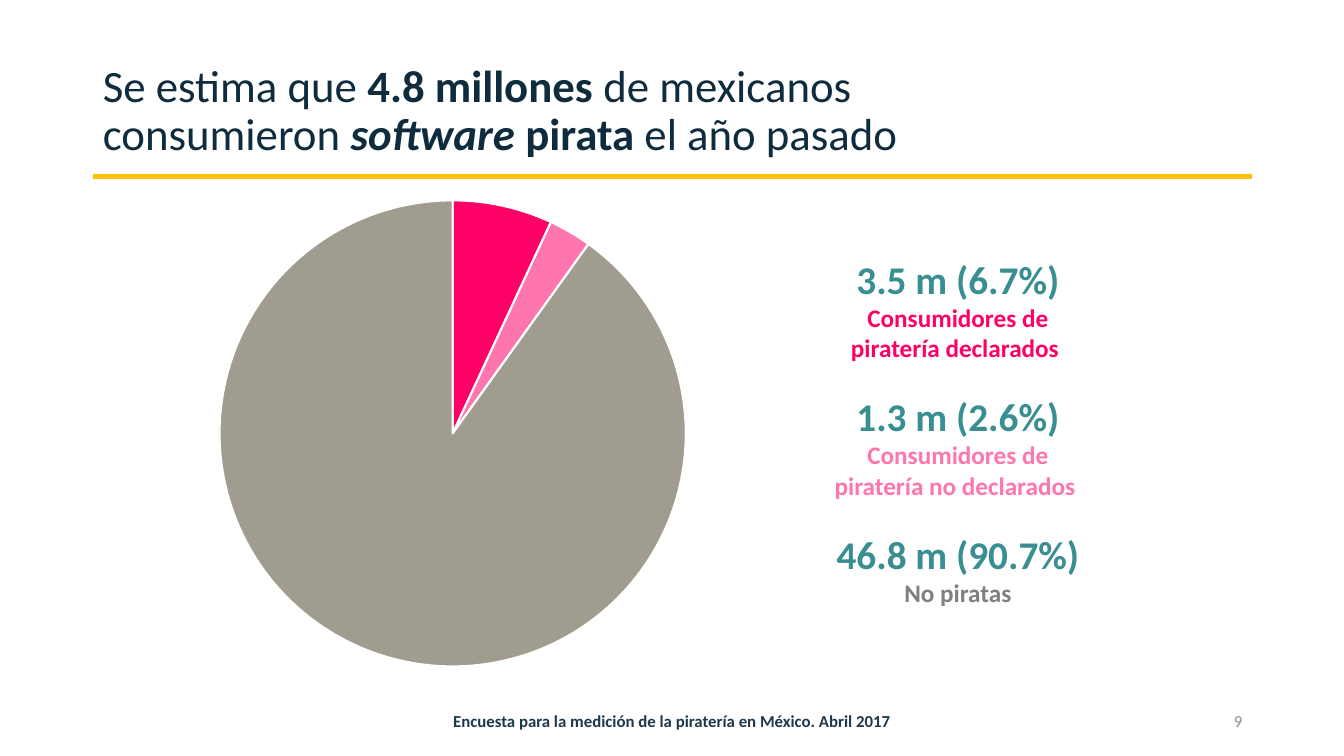
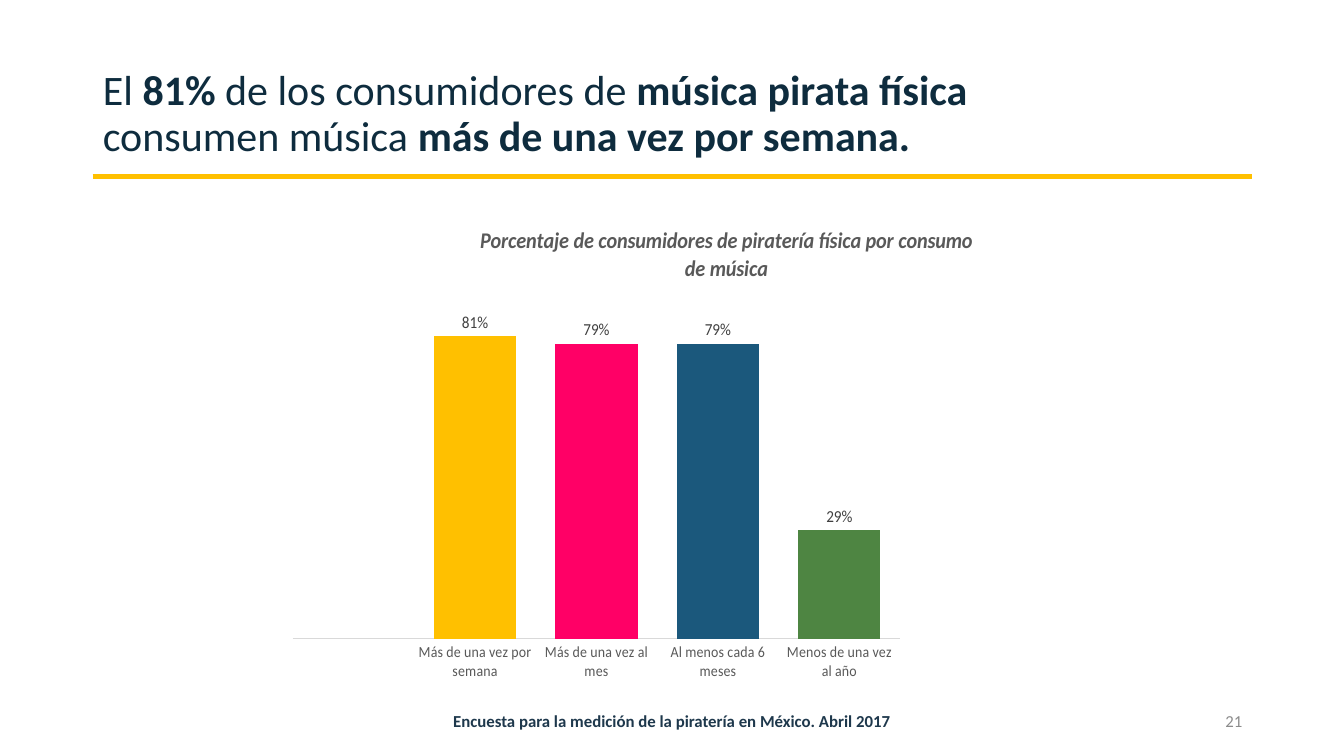
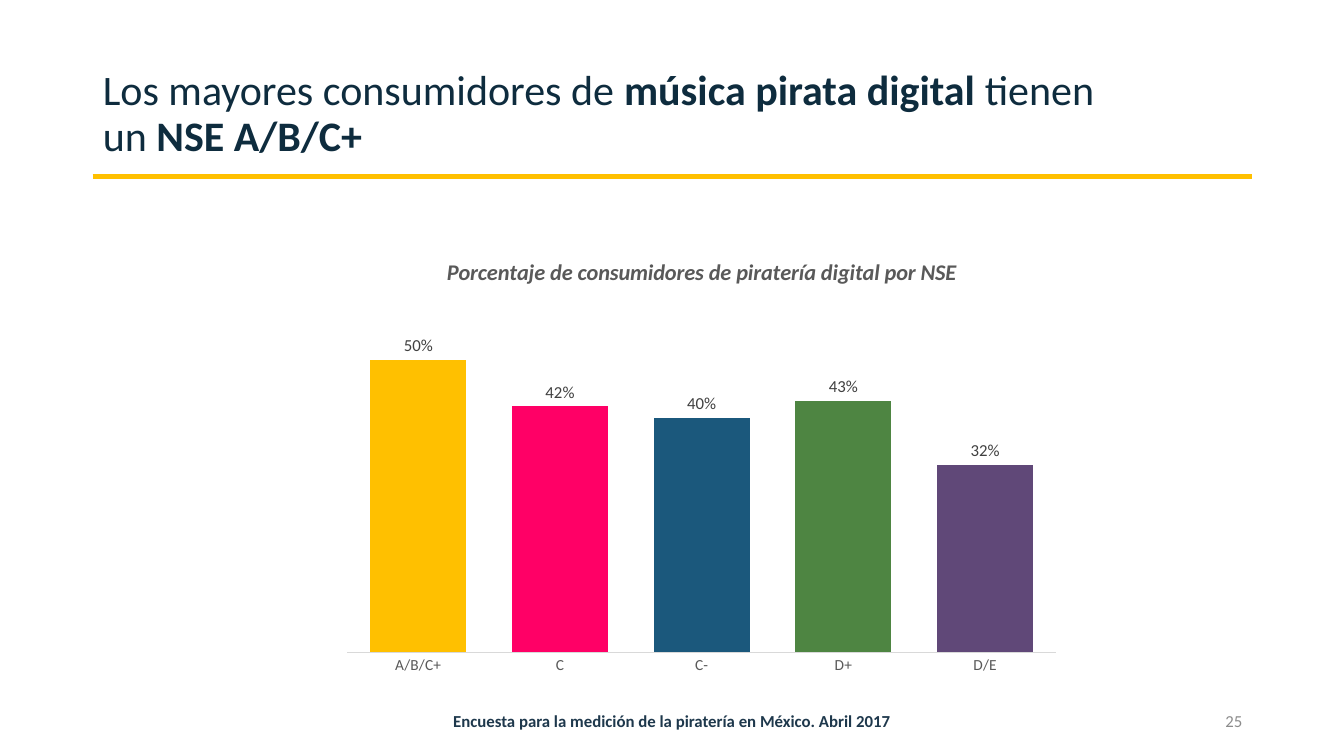
from dataclasses import dataclass

from lxml import etree
from pptx import Presentation
from pptx.chart.chart import Chart
from pptx.chart.data import CategoryChartData
from pptx.dml.color import RGBColor
from pptx.enum.chart import XL_CHART_TYPE, XL_LABEL_POSITION, XL_TICK_LABEL_POSITION, XL_TICK_MARK
from pptx.enum.shapes import MSO_CONNECTOR
from pptx.enum.text import MSO_ANCHOR, MSO_AUTO_SIZE, PP_ALIGN
from pptx.oxml import parse_xml
from pptx.oxml.ns import nsdecls, qn
from pptx.slide import Slide, SlideLayout
from pptx.util import Emu, Pt

PIE = XL_CHART_TYPE.PIE
COLUMN = XL_CHART_TYPE.COLUMN_CLUSTERED
OUTSIDE_END = XL_LABEL_POSITION.OUTSIDE_END
NEXT_TO_AXIS = XL_TICK_LABEL_POSITION.NEXT_TO_AXIS
NO_TICK = XL_TICK_MARK.NONE
STRAIGHT = MSO_CONNECTOR.STRAIGHT
TOP, MIDDLE, BOTTOM = MSO_ANCHOR.TOP, MSO_ANCHOR.MIDDLE, MSO_ANCHOR.BOTTOM
NO_AUTOFIT = MSO_AUTO_SIZE.NONE
LEFT, CENTER, RIGHT = PP_ALIGN.LEFT, PP_ALIGN.CENTER, PP_ALIGN.RIGHT

EMU_PER_PX = 9144
FONT = "Calibri"
FOOTER = "Encuesta para la medición de la piratería en México. Abril 2017"
COLORS = {
    "navy": "0E2C3E",
    "footer": "1E384C",
    "page_number": "8C8C8C",
    "gold": "FFC000",
    "pink": "FF0066",
    "light_pink": "FF75AD",
    "stone": "A19C90",
    "teal": "398E92",
    "gray": "7F7F7F",
    "blue": "1B587C",
    "green": "4E8542",
    "purple": "604878",
    "axis_text": "595959",
    "axis_line": "D9D9D9",
    "label": "404040",
    "white": "FFFFFF",
    "black": "000000",
}


@dataclass(frozen=True)
class Box:
    left: int
    top: int
    width: int
    height: int

    def emu(self) -> tuple[Emu, Emu, Emu, Emu]:
        return px(self.left), px(self.top), px(self.width), px(self.height)


@dataclass(frozen=True)
class Span:
    text: str
    bold: bool = False
    italic: bool = False


@dataclass(frozen=True)
class Line:
    text: str
    size: int
    color: str
    bold: bool = False
    space_before: float = 0


@dataclass(frozen=True)
class ColumnChart:
    box: Box
    title: str
    bars: list[tuple[str, float | None, str]]
    maximum: float
    plot_layout: dict[str, float]
    title_layout: dict[str, float] | None = None


TITLE_BOX = Box(92, 40, 1005, 124)
FOOTER_BOX = Box(399, 695, 535, 40)
NUMBER_BOX = Box(942, 695, 300, 40)
PIE_BOX = Box(161, 184, 576, 492)
PIE_LAYOUT = {"x": 0.09, "y": 0.03, "w": 0.82, "h": 0.94}
PIE_SLICES = [("1", 7, "pink"), ("2", 3, "light_pink"), ("3", 91, "stone")]
FIGURES_BOX = Box(809, 248, 282, 364)
FIGURES = [
    ("3.5 m (6.7%)", "Consumidores de piratería declarados ", "pink"),
    ("1.3 m (2.6%)", "Consumidores de piratería no declarados ", "light_pink"),
    ("46.8 m (90.7%)", "No piratas", "gray"),
]
FREQUENCY_CHART = ColumnChart(
    Box(278, 210, 693, 476),
    "Porcentaje de consumidores de piratería física por consumo de música",
    [
        (" ", None, "purple"),
        ("Más de una vez por semana", 0.81, "gold"),
        ("Más de una vez al mes", 0.79, "pink"),
        ("Al menos cada 6 meses", 0.79, "blue"),
        ("Menos de una vez al año", 0.29, "green"),
    ],
    0.9,
    {"x": 0.02, "y": 0.19, "w": 0.96, "h": 0.7},
    {"x": 0.31, "y": 0.02},
)
LEVEL_CHART = ColumnChart(
    Box(330, 237, 732, 441),
    "Porcentaje de consumidores de piratería digital por NSE",
    [
        ("A/B/C+", 0.5, "gold"),
        ("C", 0.42, "pink"),
        ("C-", 0.4, "blue"),
        ("D+", 0.43, "green"),
        ("D/E", 0.32, "purple"),
    ],
    0.6,
    {"x": 0.02, "y": 0.14, "w": 0.96, "h": 0.79},
)


def px(length: int) -> Emu:
    return Emu(length * EMU_PER_PX)


def rgb(name: str) -> RGBColor:
    return RGBColor.from_string(COLORS[name])


def set_font(font, size: int, color: str, bold: bool = False, italic: bool = False) -> None:
    font.name = FONT
    font.size = Pt(size)
    font.color.rgb = rgb(color)
    font.bold = bold
    font.italic = italic


def add_text(page: Slide, box: Box, lines: list[Line], align=LEFT, anchor=TOP) -> None:
    frame = page.shapes.add_textbox(*box.emu()).text_frame
    frame.word_wrap = True
    frame.vertical_anchor = anchor
    frame.text = "\n".join(line.text for line in lines)
    for para, line in zip(frame.paragraphs, lines):
        para.alignment = align
        if line.space_before:
            para.space_before = Pt(line.space_before)
        set_font(para.runs[0].font, line.size, line.color, line.bold)


def move_rule_to_layout(page: Slide, layout: SlideLayout) -> None:
    rule = page.shapes.add_connector(STRAIGHT, px(92), px(175), px(1242), px(175))
    rule.line.color.rgb = rgb("gold")
    rule.line.width = Pt(3)
    etree.SubElement(rule.element.spPr, qn("a:effectLst"))
    rule.element.nvCxnSpPr.cNvPr.set("id", "99")
    layout.shapes.element.append(rule.element)


def add_page(deck: Presentation, number: int, size: int, spans: list[Span]) -> Slide:
    page = deck.slides.add_slide(deck.slide_layouts[5])
    title = page.shapes.title
    title.left, title.top, title.width, title.height = TITLE_BOX.emu()
    frame = title.text_frame
    frame.auto_size = NO_AUTOFIT
    frame.word_wrap = True
    frame.vertical_anchor = BOTTOM
    para = frame.paragraphs[0]
    para.alignment = LEFT
    para.line_spacing = 0.9
    for span in spans:
        run = para.add_run()
        run.text = span.text
        set_font(run.font, size, "navy", span.bold, span.italic)
    add_text(page, NUMBER_BOX, [Line(str(number), 12, "page_number")], RIGHT, MIDDLE)
    add_text(page, FOOTER_BOX, [Line(FOOTER, 12, "footer", True)], CENTER, MIDDLE)
    return page


def set_layout(parent, position: int, values: dict[str, float], target: str = "") -> None:
    for previous in parent.findall(qn("c:layout")):
        parent.remove(previous)
    modes = "".join(f'<c:{key}Mode val="edge"/>' for key in "xy")
    sizes = "".join(f'<c:{key} val="{value}"/>' for key, value in values.items())
    parent.insert(position, parse_xml(
        f'<c:layout {nsdecls("c")}><c:manualLayout>{target}{modes}{sizes}'
        "</c:manualLayout></c:layout>"
    ))


def add_chart(page: Slide, kind, box: Box, bars: list, plot_layout: dict[str, float]) -> Chart:
    data = CategoryChartData()
    data.categories = [name for name, _, _ in bars]
    data.add_series("Series 1", [value for _, value, _ in bars])
    chart = page.shapes.add_chart(kind, *box.emu(), data).chart
    set_font(chart.font, 10, "black")
    chart.has_legend = False
    chart.has_title = False
    plot = chart.plots[0]
    plot.vary_by_categories = False
    for index, (_, value, color) in enumerate(bars):
        if value is not None:
            fill = plot.series[0].points[index].format.fill
            fill.solid()
            fill.fore_color.rgb = rgb(color)
    area = chart.element.xpath("c:chart/c:plotArea")[0]
    set_layout(area, 0, plot_layout, '<c:layoutTarget val="inner"/>')
    return chart


def add_pie(page: Slide) -> None:
    chart = add_chart(page, PIE, PIE_BOX, PIE_SLICES, PIE_LAYOUT)
    for index in range(len(PIE_SLICES)):
        border = chart.plots[0].series[0].points[index].format.line
        border.color.rgb = rgb("white")
        border.width = Pt(1.5)


def add_columns(page: Slide, content: ColumnChart) -> None:
    chart = add_chart(page, COLUMN, content.box, content.bars, content.plot_layout)
    chart.has_title = True
    heading = chart.chart_title
    heading.include_in_layout = False
    heading.text_frame.text = content.title
    set_font(heading.text_frame.paragraphs[0].runs[0].font, 16, "axis_text", True, True)
    if content.title_layout:
        set_layout(heading.element, 1, content.title_layout)
    plot = chart.plots[0]
    plot.gap_width = 48
    plot.overlap = -27
    series_fill = plot.series[0].format.fill
    series_fill.solid()
    series_fill.fore_color.rgb = rgb("gold")
    plot.has_data_labels = True
    labels = plot.data_labels
    labels.show_value = True
    labels.position = OUTSIDE_END
    labels.number_format = "0%"
    labels.number_format_is_linked = False
    set_font(labels.font, 12, "label")
    categories = chart.category_axis
    categories.major_tick_mark = NO_TICK
    categories.minor_tick_mark = NO_TICK
    categories.tick_label_position = NEXT_TO_AXIS
    categories.has_major_gridlines = False
    set_font(categories.tick_labels.font, 11, "axis_text")
    categories.format.line.color.rgb = rgb("axis_line")
    categories.format.line.width = Pt(0.75)
    values = chart.value_axis
    values.minimum_scale = 0
    values.maximum_scale = content.maximum
    values.major_tick_mark = NO_TICK
    values.has_major_gridlines = False
    values.tick_labels.number_format = "0%"
    values.tick_labels.number_format_is_linked = False
    values.visible = False


def main() -> None:
    deck = Presentation()
    deck.slide_width, deck.slide_height = px(1333), px(750)

    page = add_page(deck, 9, 32, [
        Span("Se estima que "),
        Span("4.8 millones ", True),
        Span("de mexicanos consumieron "),
        Span("software", True, True),
        Span(" pirata ", True),
        Span("el año pasado"),
    ])
    move_rule_to_layout(page, deck.slide_layouts[5])
    add_pie(page)
    lines = []
    for figure, group, color in FIGURES:
        lines.append(Line(figure, 28, "teal", True, 21.5 if lines else 0))
        lines.append(Line(group, 18, color, True))
    add_text(page, FIGURES_BOX, lines, CENTER)

    page = add_page(deck, 21, 30, [
        Span("El "),
        Span("81%", True),
        Span(" de los consumidores de "),
        Span("música pirata física ", True),
        Span("consumen música "),
        Span("más de una vez por semana.", True),
    ])
    add_columns(page, FREQUENCY_CHART)

    page = add_page(deck, 25, 30, [
        Span("Los mayores consumidores de "),
        Span("música pirata digital", True),
        Span(" tienen un "),
        Span("NSE A/B/C+", True),
    ])
    add_columns(page, LEVEL_CHART)

    deck.save("out.pptx")


if __name__ == "__main__":
    main()
